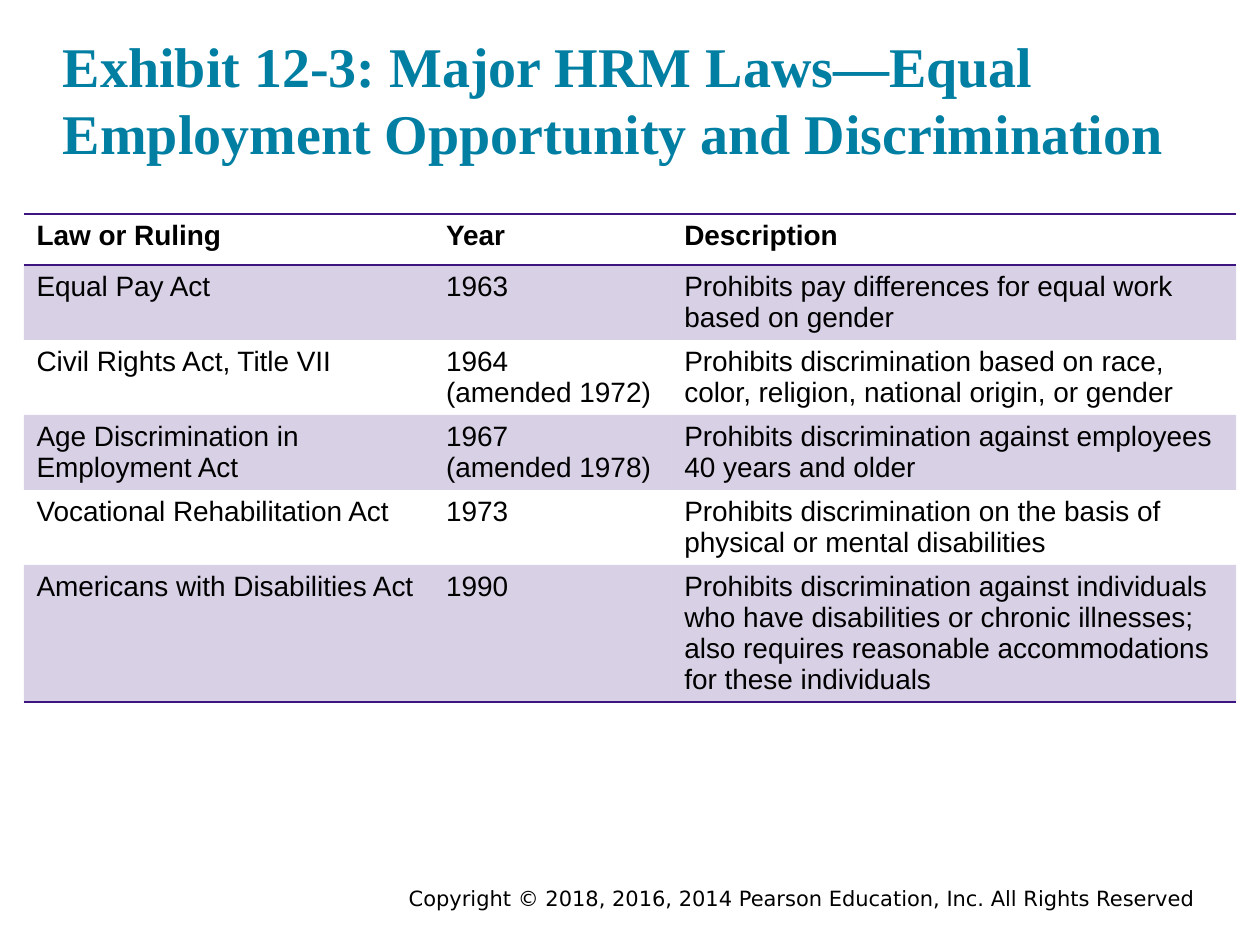
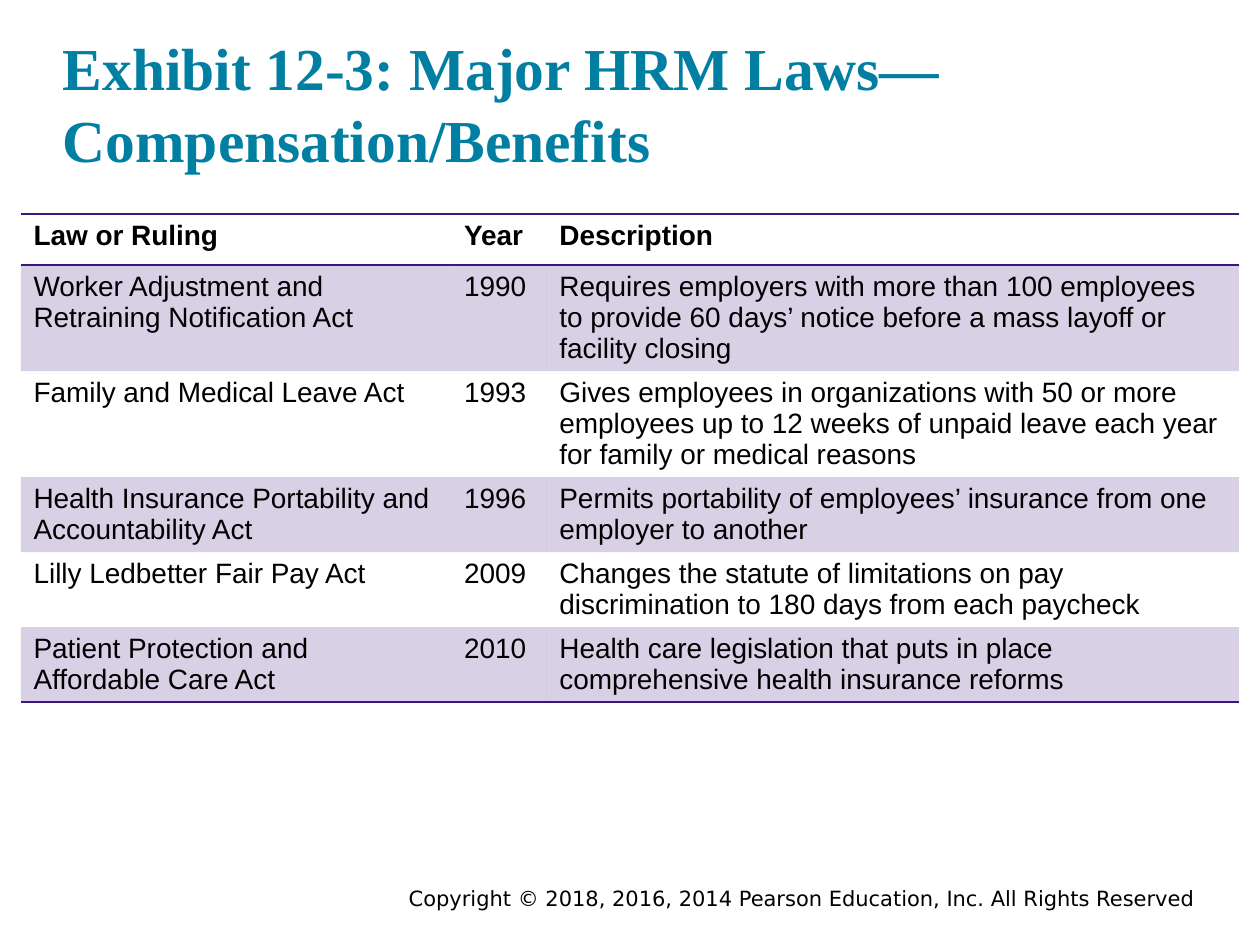
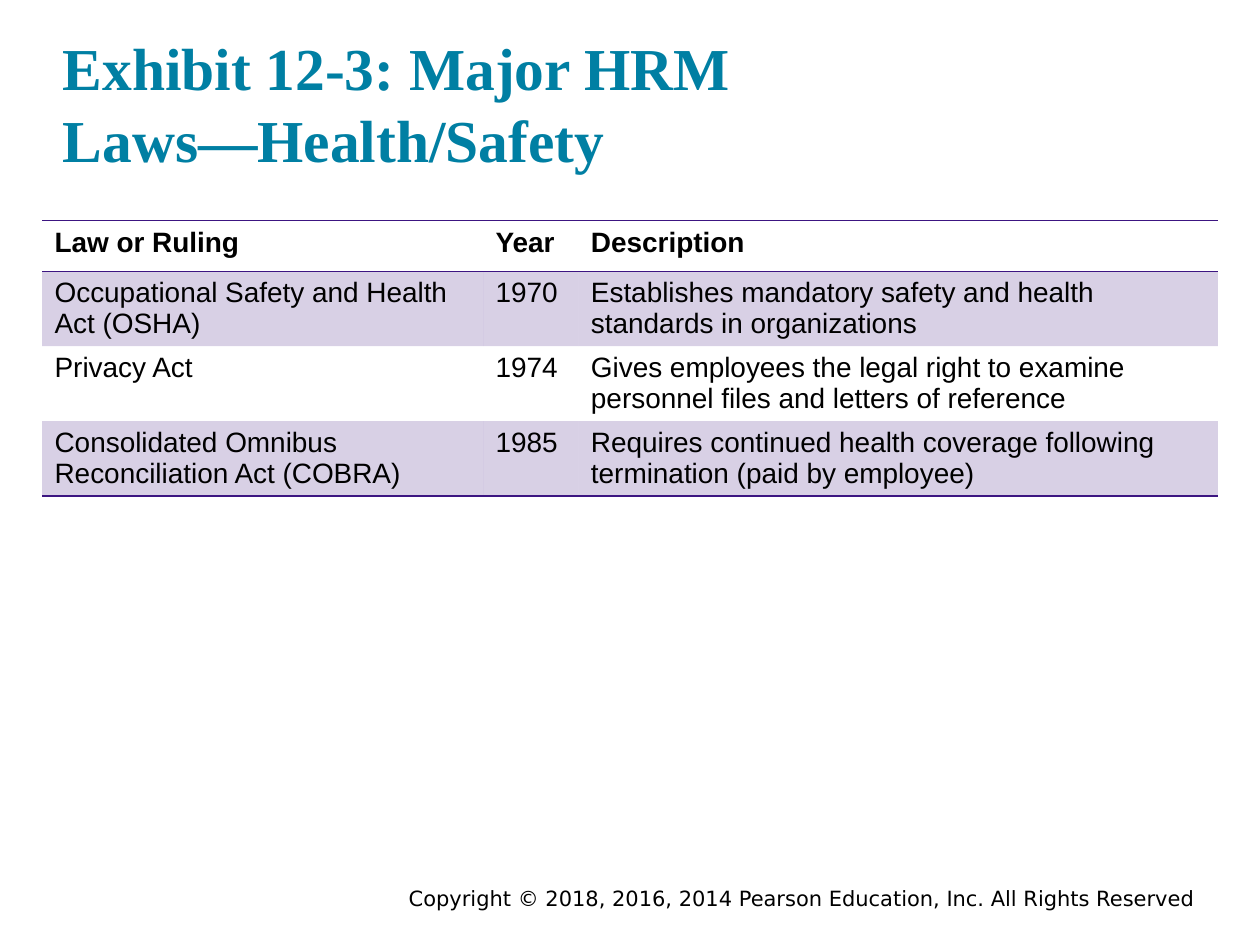
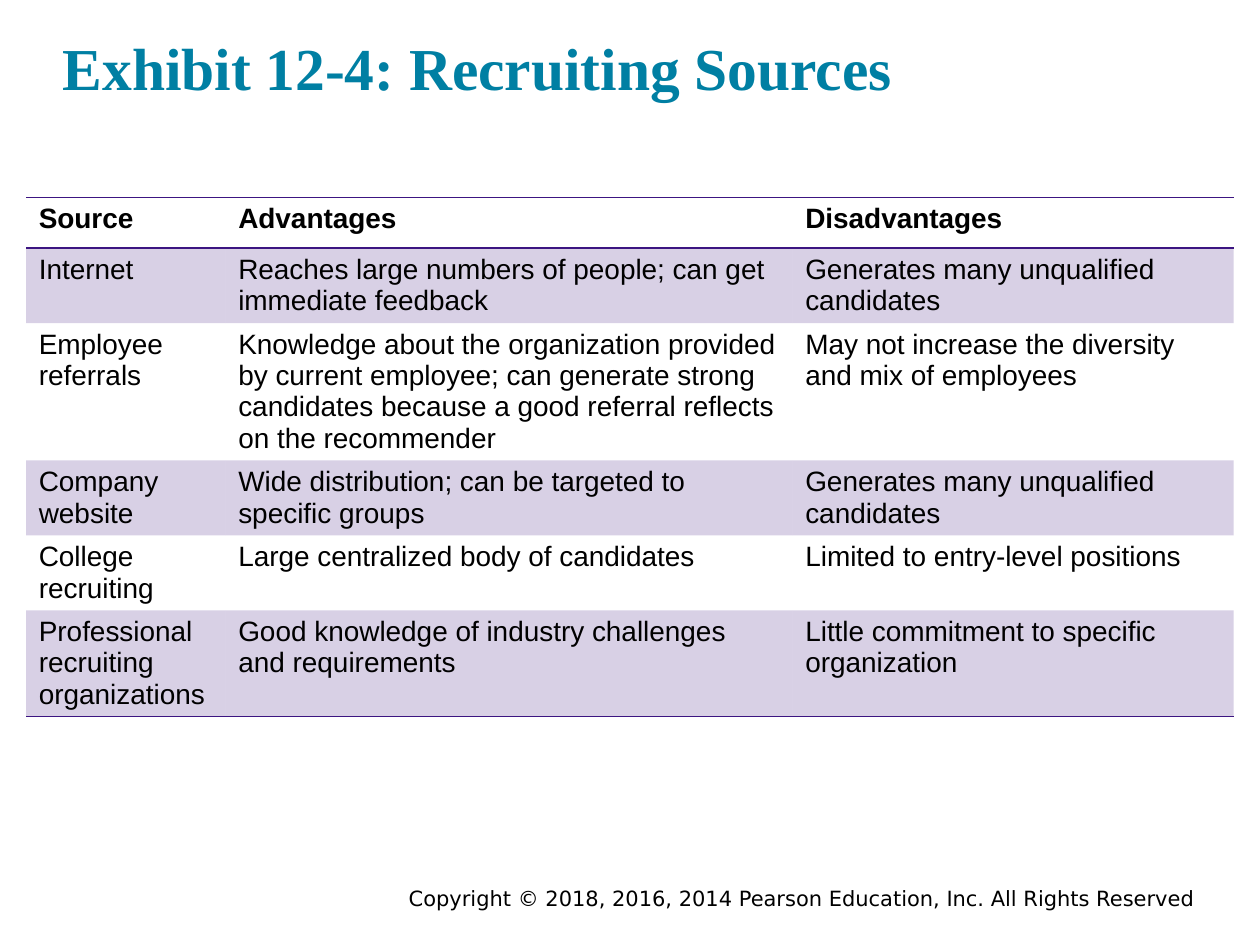
from lxml.etree import SubElement
from pptx import Presentation
from pptx.dml.color import RGBColor
from pptx.enum.text import MSO_ANCHOR, PP_ALIGN as Align
from pptx.oxml import parse_xml
from pptx.oxml.ns import nsdecls, qn
from pptx.util import Pt

COLORS = {"title": "007FA3", "text": "000000", "accent": "3C1581", "background": "FFFFFF"}
FONTS = {"title": "Times New Roman", "table": "Arial", "footer": "DejaVu Sans"}
SLIDE_WIDTH, SLIDE_HEIGHT = 720, 540
ROW_HEIGHT = 29
LINE_HEIGHT = 17.8
BAND_OPACITY = 20
PLAIN_TABLE_STYLE = "{2D5ABB26-0587-4C30-8999-92F81FD0307C}"
COPYRIGHT = "Copyright © 2018, 2016, 2014 Pearson Education, Inc. All Rights Reserved"
LAW_HEADER = ("Law or Ruling", "Year", "Description")

EXHIBITS = [
    {
        "title": "Exhibit 12-3: Major HRM Laws—Equal Employment Opportunity and Discrimination",
        "title_size": 32,
        "top": 122.4,
        "columns": (234, 136.2, 322.5),
        "rows": [
            LAW_HEADER,
            ("Equal Pay Act", "1963", "Prohibits pay differences for equal work based on gender"),
            ("Civil Rights Act, Title VII", "1964\n(amended 1972)",
             "Prohibits discrimination based on race, color, religion, national origin, or gender"),
            ("Age Discrimination in Employment Act", "1967\n(amended 1978)",
             "Prohibits discrimination against employees 40 years and older"),
            ("Vocational Rehabilitation Act", "1973",
             "Prohibits discrimination on the basis of physical or mental disabilities"),
            ("Americans with Disabilities Act", "1990",
             "Prohibits discrimination against individuals who have disabilities or chronic illnesses; "
             "also requires reasonable accommodations for these individuals"),
        ],
    },
    {
        "title": "Exhibit 12-3: Major HRM Laws—Compensation/Benefits",
        "top": 122.4,
        "columns": (246, 54.5, 395.5),
        "rows": [
            LAW_HEADER,
            ("Worker Adjustment and Retraining Notification Act", "1990",
             "Requires employers with more than 100 employees to provide 60 days’ notice "
             "before a mass layoff or facility closing"),
            ("Family and Medical Leave Act", "1993",
             "Gives employees in organizations with 50 or more employees up to 12 weeks "
             "of unpaid leave each year for family or medical reasons"),
            ("Health Insurance Portability and Accountability Act", "1996",
             "Permits portability of employees’ insurance from one employer to another"),
            ("Lilly Ledbetter Fair Pay Act", "2009",
             "Changes the statute of limitations on pay discrimination to 180 days from each paycheck"),
            ("Patient Protection and Affordable Care Act", "2010",
             "Health care legislation that puts in place comprehensive health insurance reforms"),
        ],
    },
    {
        "title": "Exhibit 12-3: Major HRM Laws—Health/Safety",
        "title_height": 75.6,
        "title_right_margin": 200,
        "top": 126,
        "columns": (252, 54.5, 365.5),
        "rows": [
            LAW_HEADER,
            ("Occupational Safety and Health Act (OSHA)", "1970",
             "Establishes mandatory safety and health standards in organizations"),
            ("Privacy Act", "1974",
             "Gives employees the legal right to examine personnel files and letters of reference"),
            ("Consolidated Omnibus Reconciliation Act (COBRA)", "1985",
             "Requires continued health coverage following termination (paid by employee)"),
        ],
    },
    {
        "title": "Exhibit 12-4: Recruiting Sources",
        "top": 112.8,
        "columns": (114, 324, 252),
        "rows": [
            ("Source", "Advantages", "Disadvantages"),
            ("Internet", "Reaches large numbers of people; can get immediate feedback",
             "Generates many unqualified candidates"),
            ("Employee referrals",
             "Knowledge about the organization provided by current employee; can generate strong "
             "candidates because a good referral reflects on the recommender",
             "May not increase the diversity and mix of employees"),
            ("Company website", "Wide distribution; can be targeted to specific groups",
             "Generates many unqualified candidates"),
            ("College recruiting", "Large centralized body of candidates",
             "Limited to entry-level positions"),
            ("Professional recruiting organizations",
             "Good knowledge of industry challenges and requirements",
             "Little commitment to specific organization"),
        ],
    },
]


class Deck:
    def __init__(self):
        self.presentation = Presentation()
        self.presentation.slide_width = Pt(SLIDE_WIDTH)
        self.presentation.slide_height = Pt(SLIDE_HEIGHT)
        self.slide = None

    def color(self, name):
        return RGBColor.from_string(COLORS[name])

    def add_slide(self):
        self.slide = self.presentation.slides.add_slide(self.presentation.slide_layouts[6])
        fill = self.slide.background.fill
        fill.solid()
        fill.fore_color.rgb = self.color("background")

    def add_run(self, paragraph, text, size, font, color="text", bold=False):
        run = paragraph.add_run()
        run.text = text
        run.font.size = Pt(size)
        run.font.name = FONTS[font]
        run.font.bold = bold
        run.font.color.rgb = self.color(color)

    def add_text_frame(self, left, top, width, height):
        box = self.slide.shapes.add_textbox(Pt(left), Pt(top), Pt(width), Pt(height))
        box.text_frame.word_wrap = True
        return box.text_frame

    def add_title(self, text, size, height, right_margin):
        frame = self.add_text_frame(36, 18, 648, height)
        frame.vertical_anchor = MSO_ANCHOR.TOP
        frame.margin_left = frame.margin_top = frame.margin_bottom = 0
        frame.margin_right = Pt(right_margin)
        self.add_run(frame.paragraphs[0], text, size, "title", "title", bold=True)

    def add_footer(self):
        paragraph = self.add_text_frame(126, 502.6, 564, 21.6).paragraphs[0]
        paragraph.alignment = Align.RIGHT
        self.add_run(paragraph, COPYRIGHT, 12, "footer")

    def set_borders(self, cell, sides):
        properties = cell._tc.get_or_add_tcPr()
        for index, side in enumerate(sides):
            line = parse_xml(
                f'<a:ln{side} {nsdecls("a")} w="{Pt(1)}"><a:solidFill>'
                f'<a:srgbClr val="{COLORS["accent"]}"/></a:solidFill></a:ln{side}>')
            properties.insert(index, line)

    def fill_band(self, cell):
        cell.fill.solid()
        cell.fill.fore_color.rgb = self.color("accent")
        tint = next(cell._tc.get_or_add_tcPr().iter(qn("a:srgbClr")))
        SubElement(tint, qn("a:alpha")).set("val", str(BAND_OPACITY * 1000))

    def fill_cell(self, cell, text, is_header, is_band, is_last):
        frame = cell.text_frame
        for index, line in enumerate(text.split("\n")):
            paragraph = frame.add_paragraph() if index else frame.paragraphs[0]
            paragraph.line_spacing = Pt(LINE_HEIGHT)
            self.add_run(paragraph, line, 16, "table", bold=is_header)
        if is_band:
            self.fill_band(cell)
        else:
            cell.fill.background()
        self.set_borders(cell, "TB" if is_header else "B" if is_last else "")

    def add_table(self, top, columns, rows):
        width = sum(columns)
        frame = self.slide.shapes.add_table(
            len(rows), len(columns), Pt((SLIDE_WIDTH - width) / 2), Pt(top),
            Pt(width), Pt(ROW_HEIGHT * len(rows)))
        table = frame.table
        next(table._tbl.iter(qn("a:tableStyleId"))).text = PLAIN_TABLE_STYLE
        for column, column_width in zip(table.columns, columns):
            column.width = Pt(column_width)
        for row_index, row in enumerate(rows):
            table.rows[row_index].height = Pt(ROW_HEIGHT)
            for column_index, text in enumerate(row):
                self.fill_cell(table.cell(row_index, column_index), text,
                               is_header=row_index == 0,
                               is_band=row_index % 2 == 1,
                               is_last=row_index == len(rows) - 1)


def main():
    deck = Deck()
    for exhibit in EXHIBITS:
        deck.add_slide()
        deck.add_footer()
        deck.add_title(exhibit["title"], exhibit.get("title_size", 34),
                       exhibit.get("title_height", 84.2), exhibit.get("title_right_margin", 0))
        deck.add_table(exhibit["top"], exhibit["columns"], exhibit["rows"])
    deck.presentation.save("out.pptx")


if __name__ == "__main__":
    main()
